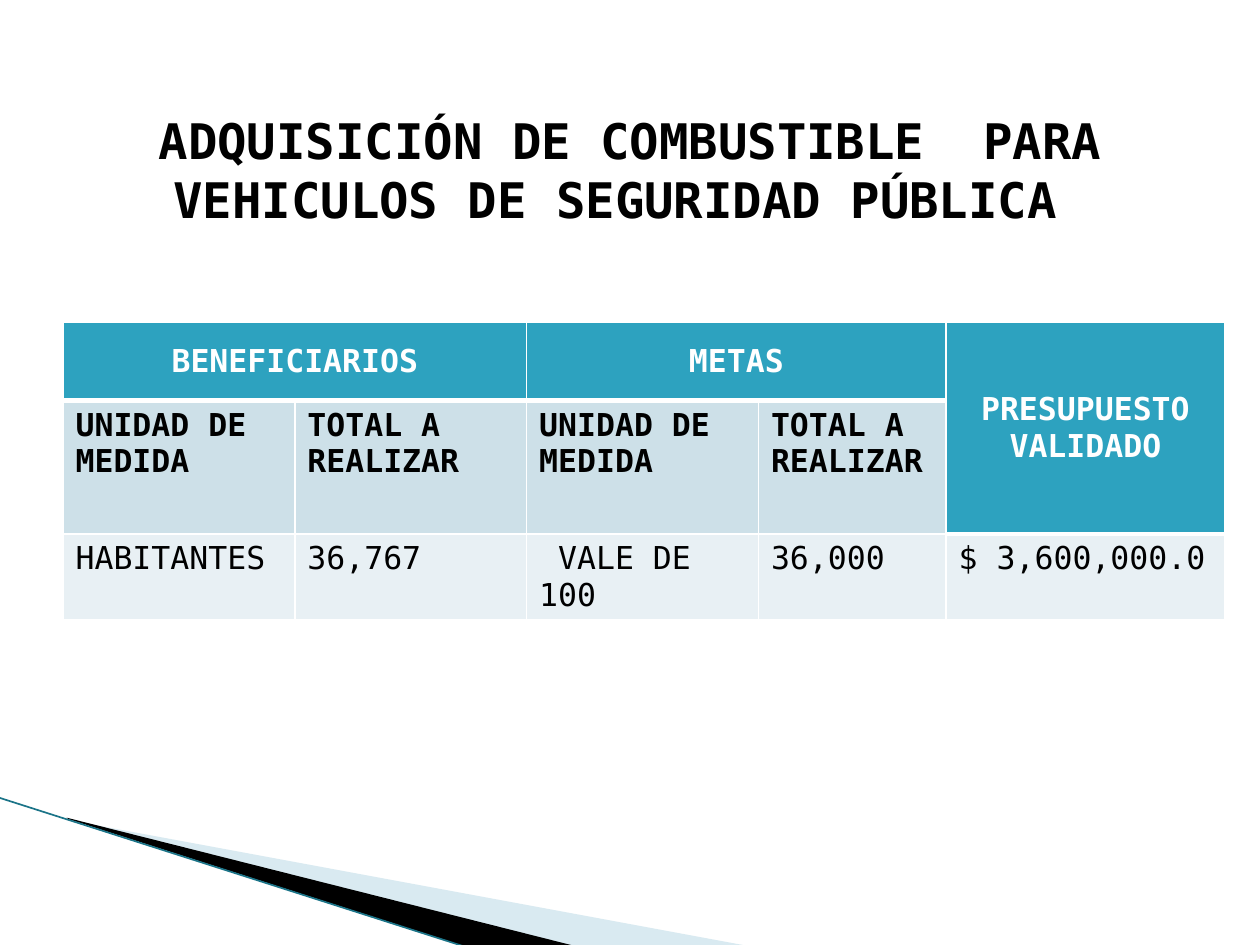
import dataclasses

import lxml.etree
import pptx
import pptx.dml.color
import pptx.enum.text
import pptx.oxml.ns
import pptx.util

PX = 9144  # EMU per px, 100 px to the inch


@dataclasses.dataclass(frozen=True)
class Theme:
    font: str = "DejaVu Sans Mono"
    title_size: int = 28
    table_size: int = 18
    ink: str = "000000"
    white: str = "FFFFFF"
    header: str = "2DA2BF"
    subheader: str = "CDE0E8"
    body: str = "E8F0F4"
    wedge: str = "A0CBDC"
    wedge_alpha: int = 40
    edge: str = "1B7488"
    edge_width: float = 0.95
    rule: int = 1
    header_rule: int = 3


THEME = Theme()
HEADINGS = {0: "BENEFICIARIOS", 2: "METAS", 4: "PRESUPUESTO VALIDADO"}
SUBHEADINGS = ["UNIDAD DE MEDIDA", "TOTAL A REALIZAR"] * 2
VALUES = ["HABITANTES", "36,767", " VALE DE 100", "36,000", "$ 3,600,000.0"]
COLUMNS = [184, 184, 184, 149, 221]
ROWS = [62, 106, 62]


def rgb(value):
    return pptx.dml.color.RGBColor.from_string(value)


def add_element(parent, tag, **attributes):
    element = lxml.etree.SubElement(parent, pptx.oxml.ns.qn(tag))
    for name, value in attributes.items():
        element.set(name, str(value))
    return element


def style_paragraph(para, size, color, bold, centered):
    para.font.name = THEME.font
    para.font.size = pptx.util.Pt(size)
    para.font.bold = bold
    para.font.color.rgb = rgb(color)
    if centered:
        para.alignment = pptx.enum.text.PP_ALIGN.CENTER


def add_wedge(page, left, top, points, color, alpha=100):
    """Draw a filled polygon whose points are offsets from left and top."""
    start, *others = [(left + x, top + y) for x, y in points]
    builder = page.shapes.build_freeform(*start, scale=PX)
    builder.add_line_segments(others, close=True)
    wedge = builder.convert_to_shape()
    wedge.shadow.inherit = False
    wedge.line.fill.background()
    wedge.fill.solid()
    wedge.fill.fore_color.rgb = rgb(color)
    if alpha < 100:
        fill_color = wedge.fill._xPr.find(".//" + pptx.oxml.ns.qn("a:srgbClr"))
        add_element(fill_color, "a:alpha", val=alpha * 1000)


def add_corner(page, left, top):
    """Draw the slanted bands of the lower left corner."""
    add_wedge(page, left + 56, top + 17, [(0, 1), (540, 101), (401, 101), (0, 0)],
              THEME.wedge, THEME.wedge_alpha)
    add_wedge(page, left + 54, top + 16, [(0, 0), (404, 102), (319, 103), (1, 1)],
              THEME.ink)
    edge = page.shapes.add_connector(
        pptx.enum.shapes.MSO_CONNECTOR.STRAIGHT,
        left * PX, top * PX, (left + 372) * PX, (top + 119) * PX)
    edge.line.color.rgb = rgb(THEME.edge)
    edge.line.width = pptx.util.Pt(THEME.edge_width)
    add_element(edge._element.spPr, "a:effectLst")


def add_title(page, left, top, width, height):
    box = page.shapes.add_textbox(left * PX, top * PX, width * PX, height * PX)
    frame = box.text_frame
    frame.word_wrap = True
    frame.vertical_anchor = pptx.enum.text.MSO_ANCHOR.MIDDLE
    para = frame.paragraphs[0]
    para.text = "ADQUISICIÓN DE COMBUSTIBLE  PARA VEHICULOS DE SEGURIDAD PÚBLICA "
    style_paragraph(para, THEME.title_size, THEME.ink, True, True)


def is_header(row, column):
    return row == 0 or (row == 1 and column == 4)


def set_borders(cell, top, bottom):
    properties = cell._tc.get_or_add_tcPr()
    widths = {"a:lnL": THEME.rule, "a:lnR": THEME.rule, "a:lnT": top, "a:lnB": bottom}
    for tag, width in widths.items():
        line = add_element(properties, tag, w=pptx.util.Pt(width))
        add_element(add_element(line, "a:solidFill"), "a:srgbClr", val=THEME.white)


def fill_cell(cell, row, column, text):
    header = is_header(row, column)
    below_header = row > 0 and is_header(row - 1, column)
    set_borders(cell, THEME.header_rule if below_header else THEME.rule,
                THEME.header_rule if header else THEME.rule)
    cell.fill.solid()
    cell.fill.fore_color.rgb = rgb(
        THEME.header if header else (THEME.subheader if row == 1 else THEME.body))
    if header:
        cell.vertical_anchor = pptx.enum.text.MSO_ANCHOR.MIDDLE
    para = cell.text_frame.paragraphs[0]
    para.text = text
    style_paragraph(para, THEME.table_size, THEME.white if header else THEME.ink,
                    row < 2, header)


def add_budget_table(page, left, top):
    table = page.shapes.add_table(
        len(ROWS), len(COLUMNS), left * PX, top * PX,
        sum(COLUMNS) * PX, sum(ROWS) * PX).table
    for column, width in zip(table.columns, COLUMNS):
        column.width = width * PX
    for row, height in zip(table.rows, ROWS):
        row.height = height * PX
    headings = [HEADINGS.get(column, "") for column in range(len(COLUMNS))]
    for row, texts in enumerate([headings, SUBHEADINGS + [""], VALUES]):
        for column, text in enumerate(texts):
            fill_cell(table.cell(row, column), row, column, text)
    for first, last in [((0, 0), (0, 1)), ((0, 2), (0, 3)), ((0, 4), (1, 4))]:
        table.cell(*first).merge(table.cell(*last))


def main():
    deck = pptx.Presentation()
    deck.slide_width, deck.slide_height = 1000 * PX, 750 * PX
    page = deck.slides.add_slide(deck.slide_layouts[6])
    add_corner(page, -1, 633)
    add_budget_table(page, 50, 256)
    add_title(page, 50, 51, 900, 167)
    deck.save("out.pptx")


if __name__ == "__main__":
    main()
